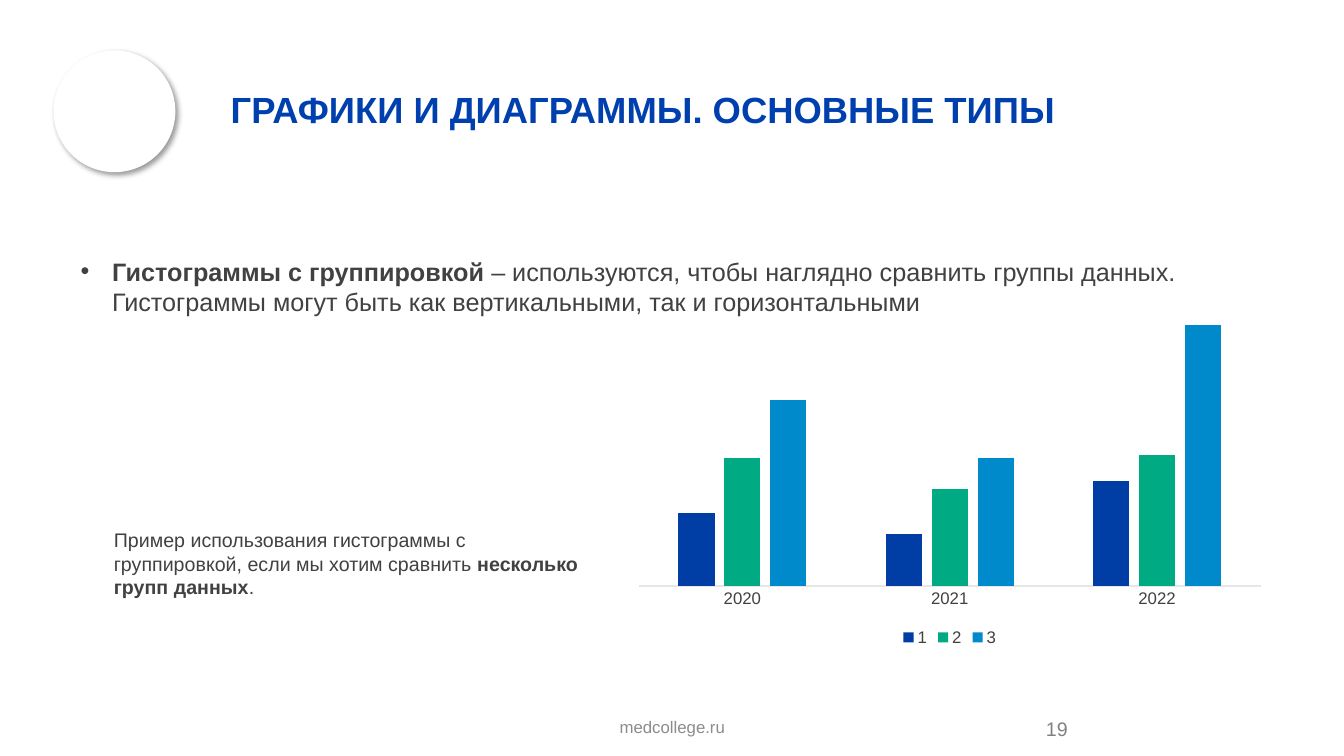
import dataclasses

import lxml.etree
import pptx
import pptx.chart.data
import pptx.dml.color
import pptx.enum.chart
import pptx.enum.shapes
import pptx.enum.text
import pptx.oxml.ns
import pptx.util

Cm = pptx.util.Cm
Pt = pptx.util.Pt
qn = pptx.oxml.ns.qn
Align = pptx.enum.text.PP_ALIGN
Anchor = pptx.enum.text.MSO_ANCHOR


@dataclasses.dataclass(frozen=True)
class Theme:
    font: str = "Arial"
    head: str = "0040AE"
    ink: str = "414141"
    page: str = "808080"
    foot: str = "8C8C8C"
    plain: str = "575757"
    axis: str = "E6E6E6"
    white: str = "FFFFFF"
    bars: tuple = ("003DA5", "00AB84", "0089CB")
    title: int = 26
    body: int = 18
    note: int = 14
    small: int = 12
    tiny: int = 10


THEME = Theme()


def rgb(code):
    return pptx.dml.color.RGBColor.from_string(code)


def apply(item, values):
    for name, value in values.items():
        setattr(item, name, value)


def style(font, size, color, **more):
    apply(font, {"name": THEME.font, "size": Pt(size), **more})
    font.color.rgb = rgb(color)


def place(shape, box):
    names = ("left", "top", "width", "height")
    apply(shape, dict(zip(names, map(Cm, box))))


def write(shape, runs, size, color, frame=None, para=None):
    """Fill a shape with one paragraph of (text, bold) runs."""
    text = shape.text_frame
    apply(text, {"word_wrap": True,
                 "auto_size": pptx.enum.text.MSO_AUTO_SIZE.NONE, **(frame or {})})
    line = text.paragraphs[0]
    apply(line, {"alignment": Align.LEFT, "space_before": Pt(0), **(para or {})})
    for words, bold in runs:
        run = line.add_run()
        run.text = words
        style(run.font, size, color, bold=bold)
    return line


def add_text(slide, box, *args, **more):
    return write(slide.shapes.add_textbox(*map(Cm, box)), *args, **more)


def add_badge(slide, box):
    """Draw the white disc with its soft shadow."""
    disc = slide.shapes.add_shape(pptx.enum.shapes.MSO_SHAPE.OVAL, *map(Cm, box))
    disc.shadow.inherit = False
    disc.fill.solid()
    disc.fill.fore_color.rgb = rgb(THEME.white)
    disc.line.fill.background()
    glow = lxml.etree.SubElement(
        disc.element.spPr.find(qn("a:effectLst")), qn("a:outerShdw"),
        blurRad=str(Pt(4)), dist=str(Pt(3)), dir=str(45 * 60000),
        algn="tl", rotWithShape="0")
    tint = lxml.etree.SubElement(glow, qn("a:srgbClr"), val="000000")
    lxml.etree.SubElement(tint, qn("a:alpha"), val="40000")


def set_plot(chart, **sizes):
    """Fix the inner plot area as shares of the chart."""
    area = chart.element.chart.plotArea
    old = area.find(qn("c:layout"))
    if old is not None:
        area.remove(old)
    layout = lxml.etree.Element(qn("c:layout"))
    area.insert(0, layout)
    manual = lxml.etree.SubElement(layout, qn("c:manualLayout"))
    parts = {"layoutTarget": "inner", "xMode": "edge", "yMode": "edge", **sizes}
    for name, value in parts.items():
        lxml.etree.SubElement(manual, qn("c:" + name), val=str(value))


def add_bars(slide, box, cats, rows):
    kinds = pptx.enum.chart
    data = pptx.chart.data.CategoryChartData()
    data.categories = cats
    for name, values in rows.items():
        data.add_series(name, values)
    chart = slide.shapes.add_chart(
        kinds.XL_CHART_TYPE.COLUMN_CLUSTERED, *map(Cm, box), data).chart
    apply(chart, {"has_title": False, "has_legend": True})
    style(chart.font, THEME.tiny, THEME.plain)

    apply(chart.legend, {"position": kinds.XL_LEGEND_POSITION.BOTTOM,
                         "include_in_layout": False})
    style(chart.legend.font, THEME.small, THEME.ink)

    axis = chart.category_axis
    axis.major_tick_mark = kinds.XL_TICK_MARK.NONE
    axis.format.line.color.rgb = rgb(THEME.axis)
    axis.format.line.width = Pt(0.75)
    style(axis.tick_labels.font, THEME.small, THEME.ink)
    apply(chart.value_axis, {"visible": False, "has_major_gridlines": False,
                             "minimum_scale": 0, "maximum_scale": 120})

    plot = chart.plots[0]
    apply(plot, {"gap_width": 219, "overlap": -27, "vary_by_categories": False})
    for series, color in zip(plot.series, THEME.bars):
        series.format.fill.solid()
        series.format.fill.fore_color.rgb = rgb(color)
    set_plot(chart, x=0.02, y=0, w=0.96, h=0.83)


def main():
    deck = pptx.Presentation()
    apply(deck, {"slide_width": Cm(33.87), "slide_height": Cm(19.05)})
    slide = deck.slides.add_slide(deck.slide_layouts[1])
    title, body = slide.placeholders

    add_badge(slide, (1.35, 1.27, 3.07, 3.07))
    add_text(slide, (26.11, 17.83, 4.78, 1.04), [("19", False)],
             THEME.note, THEME.page, frame={"vertical_anchor": Anchor.MIDDLE})
    add_text(slide, (11.23, 17.93, 11.43, 1.02), [("medcollege.ru", False)],
             THEME.small, THEME.foot, para={"alignment": Align.CENTER})

    place(title, (5.56, 1.27, 26.42, 3.07))
    write(title, [("ГРАФИКИ И ДИАГРАММЫ. ОСНОВНЫЕ ТИПЫ", True)],
          THEME.title, THEME.head, frame={"vertical_anchor": Anchor.MIDDLE},
          para={"line_spacing": 0.9})

    place(body, (1.78, 6.32, 30.07, 1.8))
    item = write(body, [
        ("Гистограммы с группировкой ", True),
        ("– используются, чтобы наглядно сравнить группы данных. "
         "Гистограммы могут быть как вертикальными, так и горизонтальными", False),
    ], THEME.body, THEME.ink)
    props = item._p.get_or_add_pPr()
    props.set("marL", str(Cm(0.79)))
    props.set("indent", str(-Cm(0.79)))

    add_bars(slide, (15.77, 6.86, 16.33, 9.53), ("2020", "2021", "2022"), {
        "1": (28, 20, 40),
        "2": (49, 37, 50),
        "3": (71, 49, 100),
    })
    add_text(slide, (2.62, 13.18, 12.7, 1.45), [
        ("Пример использования гистограммы с группировкой, "
         "если мы хотим сравнить ", False),
        ("несколько групп данных", True),
        (".", False),
    ], THEME.note, THEME.ink, para={"space_after": Pt(3)})

    deck.save("out.pptx")


if __name__ == "__main__":
    main()
